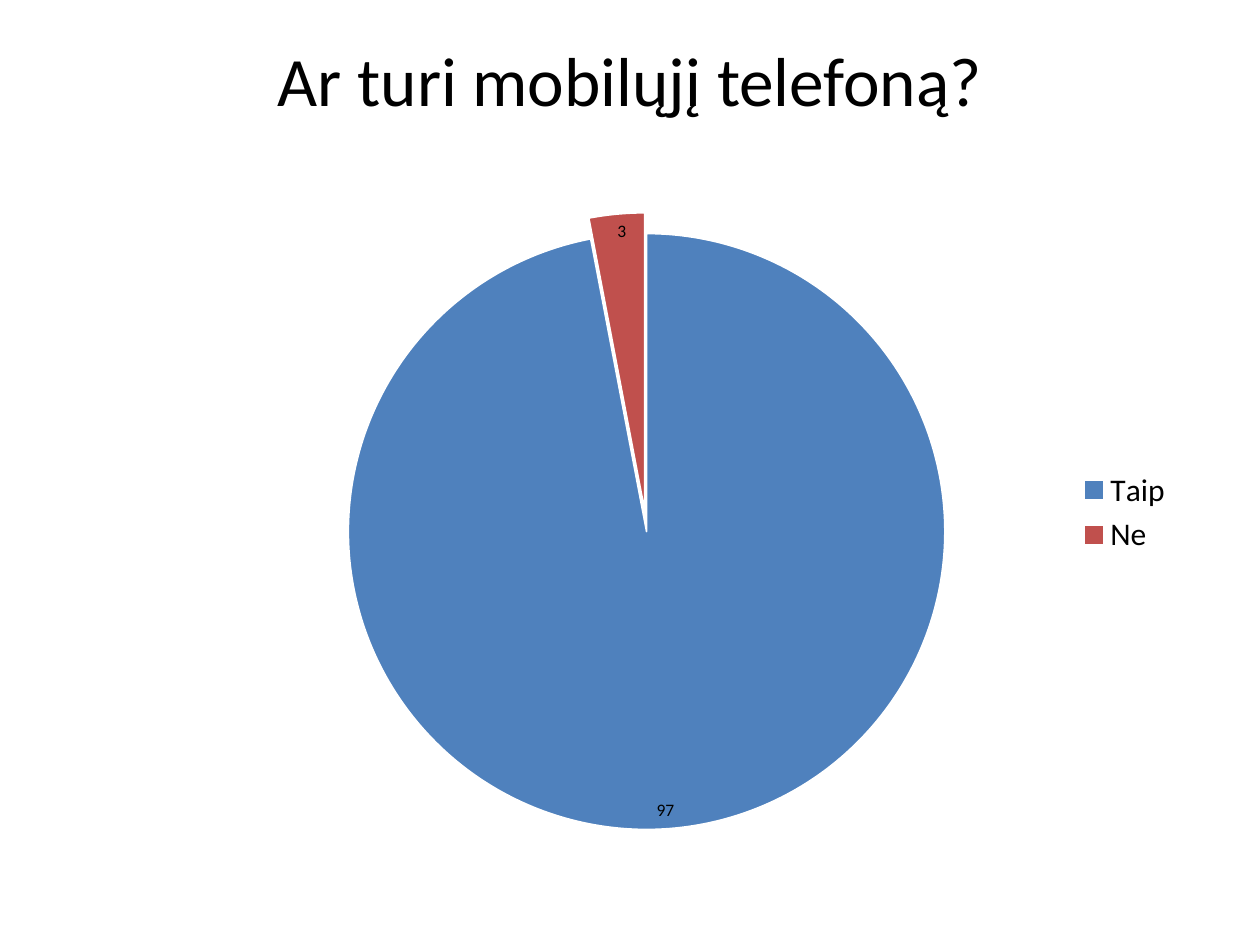
from lxml import etree
from pptx import Presentation
from pptx.chart.data import CategoryChartData
from pptx.dml.color import RGBColor
from pptx.enum.chart import XL_CHART_TYPE, XL_LABEL_POSITION, XL_LEGEND_POSITION
from pptx.enum.text import MSO_ANCHOR, PP_ALIGN
from pptx.oxml.ns import qn
from pptx.util import Cm, Pt

PIE = XL_CHART_TYPE.PIE
INSIDE_END = XL_LABEL_POSITION.INSIDE_END
LEGEND_RIGHT = XL_LEGEND_POSITION.RIGHT
TOP = MSO_ANCHOR.TOP
CENTER = PP_ALIGN.CENTER
FONT = "Calibri"


def color(value):
    return RGBColor.from_string(value)


def style_font(font, size):
    font.name = FONT
    font.size = Pt(size)
    font.color.rgb = color("000000")


presentation = Presentation()
presentation.slide_width = Cm(25.4)
presentation.slide_height = Cm(19.05)
slide = presentation.slides.add_slide(presentation.slide_layouts[6])

title = slide.shapes.add_textbox(Cm(1.27), Cm(0.76), Cm(22.86), Cm(3.18))
title_frame = title.text_frame
title_frame.word_wrap = True
title_frame.vertical_anchor = TOP
title_frame.margin_top = Cm(0)
title_frame.text = "Ar turi mobilųjį telefoną?"
paragraph = title_frame.paragraphs[0]
paragraph.alignment = CENTER
style_font(paragraph.runs[0].font, 39.6)

answers = CategoryChartData()
answers.categories = ["Taip", "Ne"]
answers.add_series("Series 1", [97, 3])
chart = slide.shapes.add_chart(
    PIE, Cm(4.5), Cm(3.94), Cm(19.4), Cm(12.8), answers
).chart
style_font(chart.font, 18)
chart.has_title = False
chart.has_legend = True
chart.legend.position = LEGEND_RIGHT
chart.legend.include_in_layout = False

plot = chart.plots[0]
plot.vary_by_categories = True
series = plot.series[0]
for index, fill_color in enumerate(["4F81BD", "C0504D"]):
    point = series.points[index]
    point.format.fill.solid()
    point.format.fill.fore_color.rgb = color(fill_color)
    point.format.line.color.rgb = color("FFFFFF")
    point.format.line.width = Pt(1)
    point.data_label.font.size = Pt(10)
    point.data_label.position = INSIDE_END

small_slice = series.points[1].format.fill and series._element.findall(qn("c:dPt"))[1]
explosion = etree.Element(qn("c:explosion"), val="7")
small_slice.find(qn("c:spPr")).addprevious(explosion)

plot_area = chart._chartSpace.chart.plotArea
for old_layout in plot_area.findall(qn("c:layout")):
    plot_area.remove(old_layout)
layout = etree.Element(qn("c:layout"))
manual_layout = etree.SubElement(layout, qn("c:manualLayout"))
for tag, value in [
    ("layoutTarget", "inner"),
    ("xMode", "edge"),
    ("yMode", "edge"),
    ("x", "0.13"),
    ("y", "0.06"),
    ("w", "0.62"),
    ("h", "0.94"),
]:
    etree.SubElement(manual_layout, qn(f"c:{tag}"), val=value)
plot_area.insert(0, layout)

presentation.save("out.pptx")
